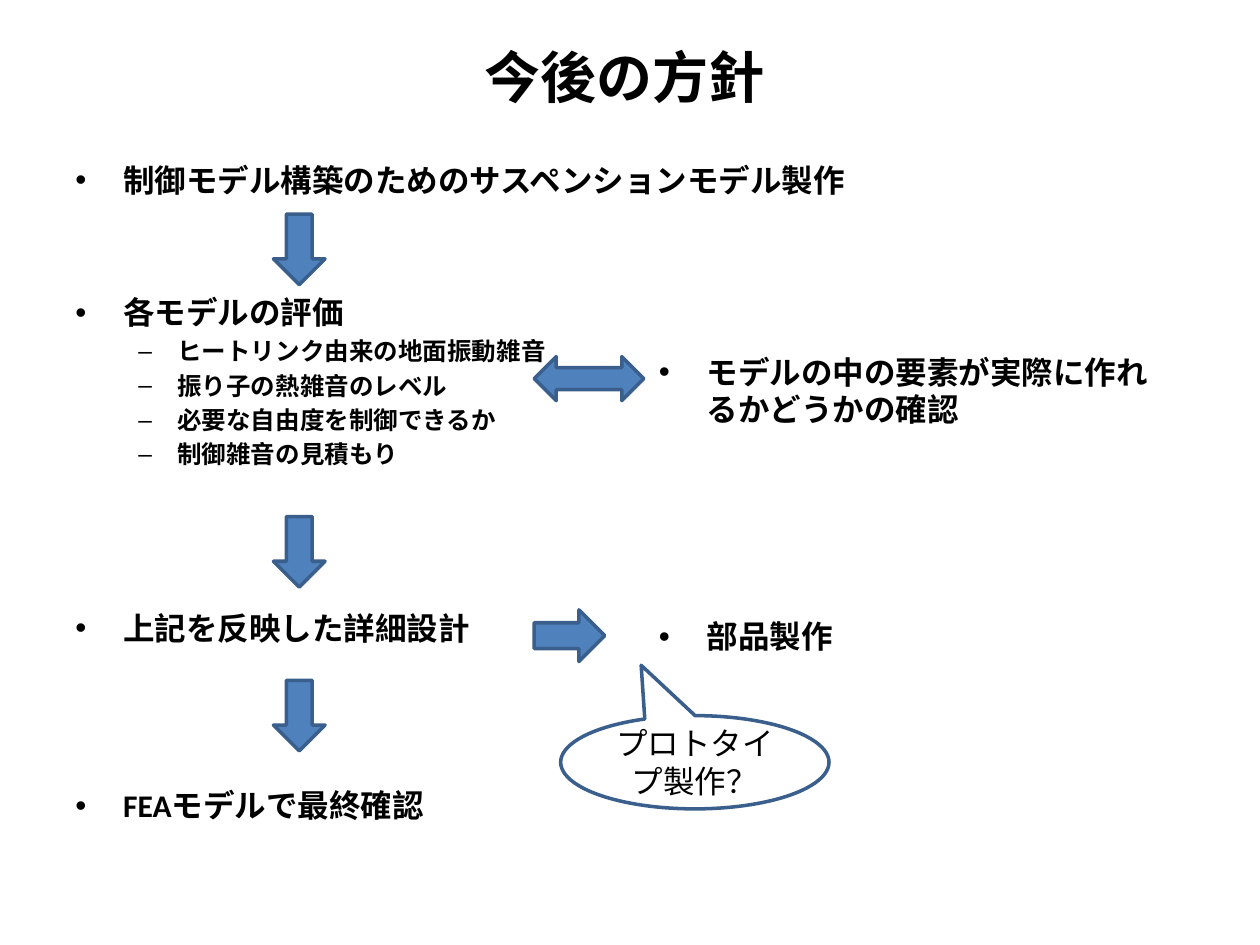
import pptx
import pptx.util
import pptx.dml.color
import pptx.enum.shapes
import pptx.enum.text
import pptx.oxml.ns
from lxml import etree

BLACK = pptx.dml.color.RGBColor(0x00, 0x00, 0x00)
BLUE = pptx.dml.color.RGBColor(0x4F, 0x81, 0xBD)
NAVY = pptx.dml.color.RGBColor(0x3A, 0x5F, 0x8C)
SHAPE = pptx.enum.shapes.MSO_SHAPE
COLS, ROWS = 100, 75
LEVELS = [("•", 0.38, -0.38, 18), ("–", 0.81, -0.31, 14)]


class FlowSlide:
    """Draws the elements of a flow slide on a grid of COLS by ROWS cells."""

    font = "Calibri"
    line_width = pptx.util.Pt(2)

    def __init__(self, prs):
        self.cell_w = prs.slide_width / COLS
        self.cell_h = prs.slide_height / ROWS
        self.s = prs.slides.add_slide(prs.slide_layouts[6])

    def place(self, col, row, cols, rows):
        return (round(col * self.cell_w), round(row * self.cell_h),
                round(cols * self.cell_w), round(rows * self.cell_h))

    def style(self, p, size, bold=True):
        for r in p.runs:
            r.font.name = self.font
            r.font.size = pptx.util.Pt(size)
            r.font.bold = bold
            r.font.color.rgb = BLACK

    def centre(self, tf, text, size, bold):
        tf.word_wrap = True
        tf.vertical_anchor = pptx.enum.text.MSO_ANCHOR.MIDDLE
        tf.text = text
        p = tf.paragraphs[0]
        p.alignment = pptx.enum.text.PP_ALIGN.CENTER
        self.style(p, size, bold)

    def title(self, cell, text):
        sp = self.s.shapes.add_textbox(*self.place(*cell))
        self.centre(sp.text_frame, text, 32, True)

    def bullets(self, cell, items):
        tf = self.s.shapes.add_textbox(*self.place(*cell)).text_frame
        tf.word_wrap = True
        tf.text = "\n".join(text for text, level, before in items)
        for p, (text, level, before) in zip(tf.paragraphs, items):
            mark, margin, indent, size = LEVELS[level]
            p.level = level
            p.space_before = pptx.util.Pt(before)
            self.style(p, size)
            pPr = p._p.get_or_add_pPr()
            pPr.set("marL", str(pptx.util.Inches(margin)))
            pPr.set("indent", str(pptx.util.Inches(indent)))
            etree.SubElement(pPr, pptx.oxml.ns.qn("a:buFont")).set("typeface", "Arial")
            etree.SubElement(pPr, pptx.oxml.ns.qn("a:buChar")).set("char", mark)

    def outline(self, kind, cell):
        sp = self.s.shapes.add_shape(kind, *self.place(*cell))
        sp.shadow.inherit = False
        sp.line.color.rgb = NAVY
        sp.line.width = self.line_width
        return sp

    def arrow(self, kind, cell):
        sp = self.outline(kind, cell)
        sp.fill.solid()
        sp.fill.fore_color.rgb = BLUE

    def callout(self, cell, tail, text):
        sp = self.outline(SHAPE.OVAL_CALLOUT, cell)
        sp.fill.background()
        sp.adjustments[0], sp.adjustments[1] = tail
        self.centre(sp.text_frame, text, 18, False)


def main():
    prs = pptx.Presentation()
    prs.slide_width = pptx.util.Inches(10)
    prs.slide_height = pptx.util.Inches(7.5)
    flow = FlowSlide(prs)

    flow.title((5.8, 3, 87.5, 6.1), "今後の方針")
    flow.bullets((5, 12.3, 90, 59.1), [
        ("制御モデル構築のためのサスペンションモデル製作", 0, 0),
        ("各モデルの評価", 0, 54),
        ("ヒートリンク由来の地面振動雑音", 1, 2.8),
        ("振り子の熱雑音のレベル", 1, 2.8),
        ("必要な自由度を制御できるか", 1, 2.8),
        ("制御雑音の見積もり", 1, 2.8),
        ("上記を反映した詳細設計", 0, 80),
        ("FEAモデルで最終確認", 0, 80),
    ])
    flow.bullets((51.3, 27.5, 43.2, 13), [("モデルの中の要素が実際に作れるかどうかの確認", 0, 0)])
    flow.bullets((51.3, 48.5, 43.2, 10.5), [("部品製作", 0, 0)])

    for row in (17, 41, 54):
        flow.arrow(SHAPE.DOWN_ARROW, (21.7, row, 4.1, 5.6))
    flow.arrow(SHAPE.LEFT_RIGHT_ARROW, (42.4, 28.3, 8.7, 3.5))
    flow.arrow(SHAPE.RIGHT_ARROW, (42.4, 48.4, 5.6, 4.1))
    flow.callout((44.5, 56.8, 21.3, 7.4), (-0.2, -1.04), "プロトタイプ製作？")

    prs.save("out.pptx")


if __name__ == "__main__":
    main()
